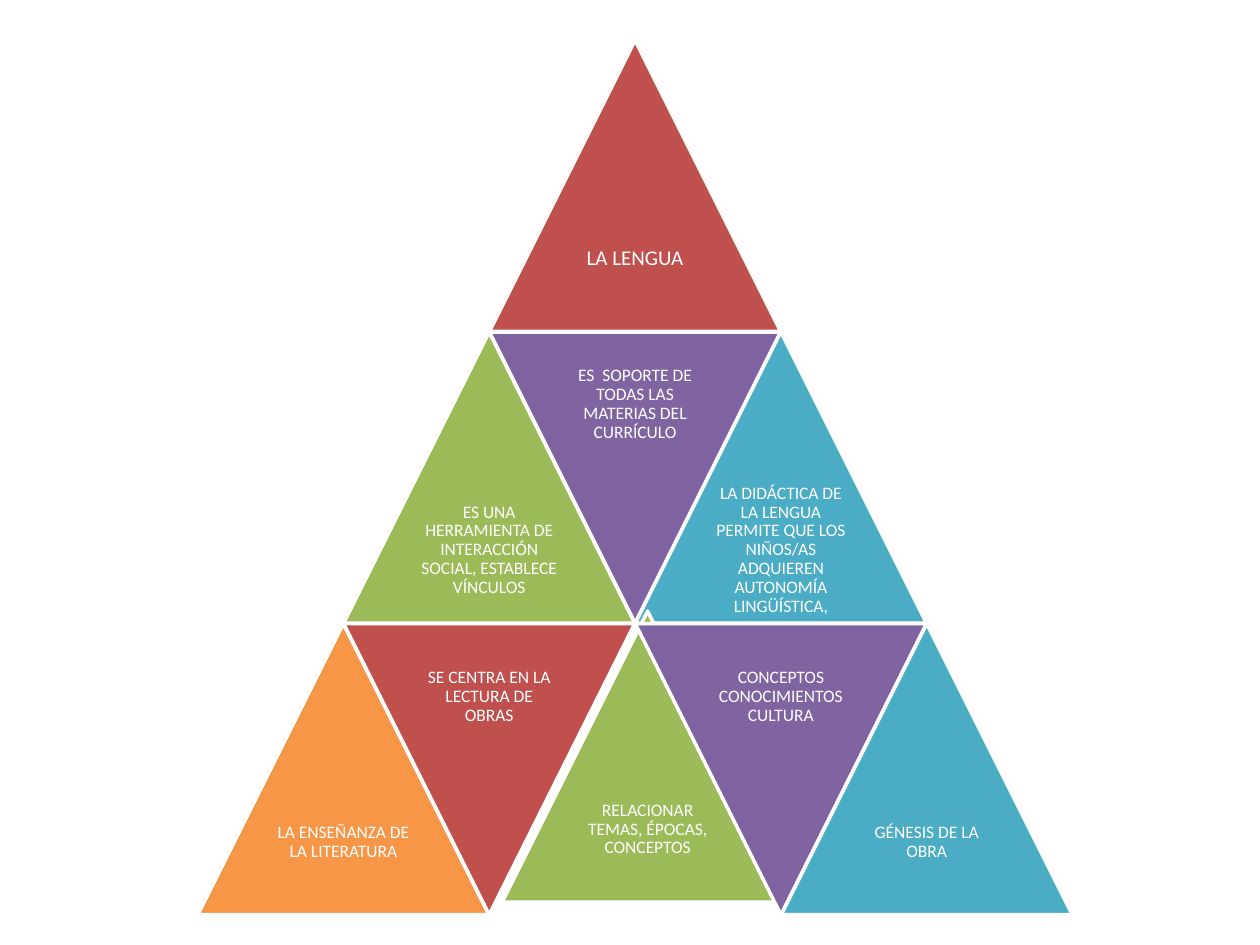
from pptx import Presentation
from pptx.dml.color import RGBColor
from pptx.enum.shapes import MSO_SHAPE
from pptx.enum.text import MSO_ANCHOR, PP_ALIGN
from pptx.util import Inches, Pt

TRIANGLE = MSO_SHAPE.ISOSCELES_TRIANGLE
MIDDLE = MSO_ANCHOR.MIDDLE
CENTER = PP_ALIGN.CENTER

RED, GREEN, PURPLE = "C0504D", "9BBB59", "8064A2"
TEAL, ORANGE, WHITE = "4BACC6", "F79646", "FFFFFF"

# Grid of triangles: neighbours overlap by half a side
LEFT, TOP = 1.57, 0.32
SIDE = 2.31
ROW_STEP = 2.315
COLUMN_STEP = ROW_STEP / 2
LABEL_SIDE = SIDE / 2

# row, column, points down, colour, text size, text
TRIANGLES = [
    (0, 2, False, RED, 12, "LA LENGUA"),
    (1, 1, False, GREEN, 10,
     "ES UNA HERRAMIENTA DE INTERACCIÓN SOCIAL, ESTABLECE VÍNCULOS"),
    (1, 2, True, PURPLE, 10, "ES  SOPORTE DE TODAS LAS MATERIAS DEL CURRÍCULO"),
    (1, 3, False, TEAL, 10,
     "LA DIDÁCTICA DE LA LENGUA PERMITE QUE LOS NIÑOS/AS ADQUIEREN "
     "AUTONOMÍA LINGÜÍSTICA,"),
    (2, 0, False, ORANGE, 10, "LA ENSEÑANZA DE LA LITERATURA"),
    (2, 1, True, RED, 10, "SE CENTRA EN LA LECTURA DE OBRAS"),
    (2, 2, False, GREEN, 10, "RELACIONAR TEMAS, ÉPOCAS, CONCEPTOS"),
    (2, 3, True, PURPLE, 10, "CONCEPTOS CONOCIMIENTOS CULTURA"),
    (2, 4, False, TEAL, 10, "GÉNESIS DE LA OBRA"),
]
# The lower green triangle sits slightly off the grid
NUDGES = {(2, 2): (0.1, -0.1)}


def color(hex_code):
    return RGBColor.from_string(hex_code)


deck = Presentation()
deck.slide_width, deck.slide_height = Inches(10), Inches(7.5)
page = deck.slides.add_slide(deck.slide_layouts[6])
pyramid = page.shapes.add_group_shape()

for row, column, points_down, fill, size, text in TRIANGLES:
    shift_x, shift_y = NUDGES.get((row, column), (0, 0))
    left = LEFT + column * COLUMN_STEP + shift_x
    top = TOP + row * ROW_STEP + shift_y

    triangle = pyramid.shapes.add_shape(
        TRIANGLE, Inches(left), Inches(top), Inches(SIDE), Inches(SIDE))
    triangle.rotation = 180 if points_down else 0
    triangle.shadow.inherit = False
    triangle.fill.solid()
    triangle.fill.fore_color.rgb = color(fill)
    triangle.line.color.rgb = color(WHITE)
    triangle.line.width = Pt(2)

    label_top = top if points_down else top + LABEL_SIDE
    label = pyramid.shapes.add_textbox(
        Inches(left + SIDE / 4), Inches(label_top),
        Inches(LABEL_SIDE), Inches(LABEL_SIDE))
    frame = label.text_frame
    frame.word_wrap = True
    frame.vertical_anchor = MIDDLE
    inset = Inches(0.05 if size == 12 else 0.04)
    frame.margin_left = frame.margin_right = inset
    frame.margin_top = frame.margin_bottom = inset

    para = frame.paragraphs[0]
    para.alignment = CENTER
    para.line_spacing = 0.9
    span = para.add_run()
    span.text = text
    span.font.name = "Calibri"
    span.font.size = Pt(size)
    span.font.color.rgb = color(WHITE)

deck.save("out.pptx")
